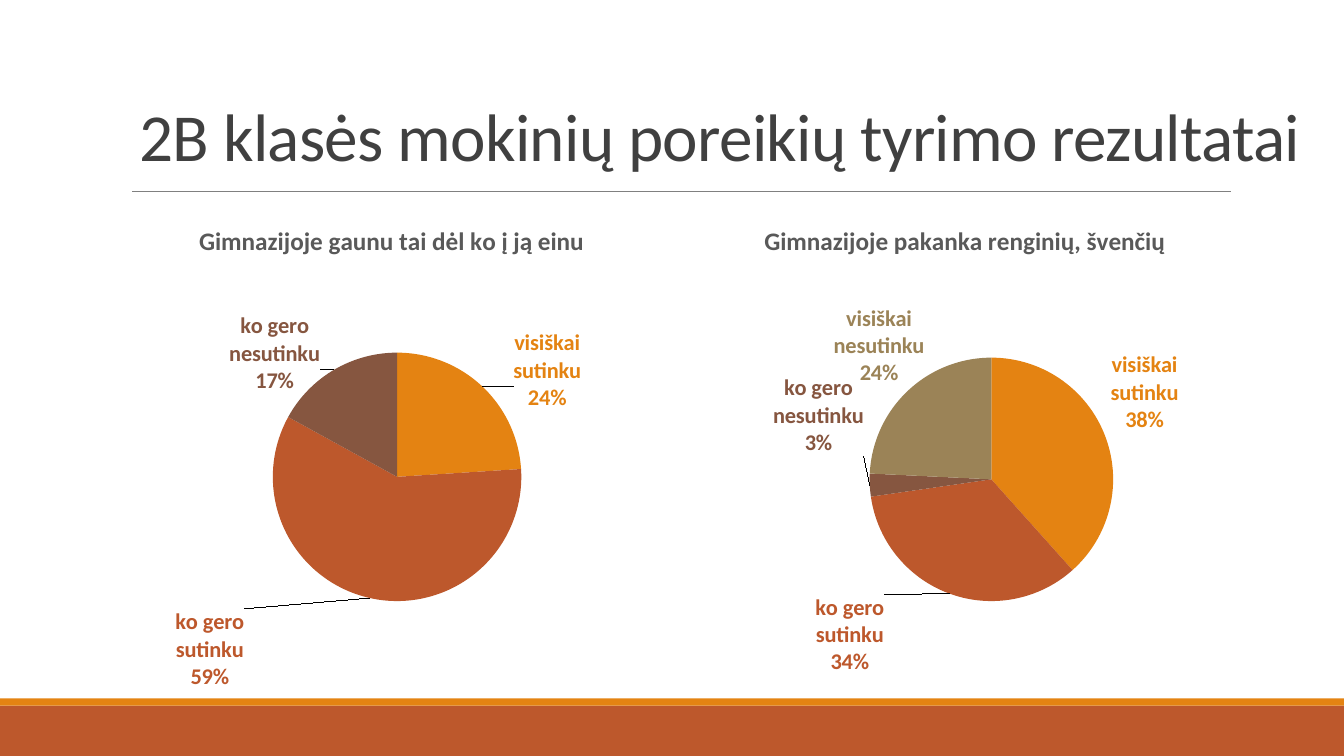
from dataclasses import dataclass

from pptx import Presentation
from pptx import util as u
from pptx.chart.data import CategoryChartData
from pptx.dml.color import RGBColor
from pptx.enum import chart as charts, shapes, text
from pptx.oxml import parse_xml
from pptx.oxml.ns import nsdecls, qn
from pptx.oxml.xmlchemy import OxmlElement

FONT = "Calibri"
COLORS = {
    "orange": "E48312",
    "rust": "BD582C",
    "brown": "865640",
    "olive": "9B8357",
    "title": "404040",
    "heading": "595959",
    "rule": "808080",
}


@dataclass(frozen=True)
class Answer:
    name: str
    percent: int
    color: str
    shift: tuple[float, float]


@dataclass(frozen=True)
class Survey:
    question: str
    left: float
    width: float
    plot_area: tuple[float, float, float, float]
    answers: list[Answer]


@dataclass(frozen=True)
class Band:
    top: float
    height: float
    color: str


BANDS = [Band(7, 0.5, "rust"), Band(6.93, 0.07, "orange")]
SURVEYS = [
    Survey("Gimnazijoje gaunu tai dėl ko į ją einu", 1.2, 5.37, (0.28, 0.3, 0.46, 0.5), [
        Answer("visiškai sutinku", 24, "orange", (0.05, 0.06)),
        Answer("ko gero sutinku", 59, "rust", (-0.23, 0.01)),
        Answer("ko gero nesutinku", 17, "brown", (-0.02, 0.06)),
    ]),
    Survey("Gimnazijoje pakanka renginių, švenčių", 6.94, 5.26, (0.32, 0.31, 0.46, 0.49), [
        Answer("visiškai sutinku", 38, "orange", (0, 0)),
        Answer("ko gero sutinku", 34, "rust", (-0.12, -0.01)),
        Answer("ko gero nesutinku", 3, "brown", (0, -0.14)),
        Answer("visiškai nesutinku", 24, "olive", (0.04, 0)),
    ]),
]


def rgb(name: str) -> RGBColor:
    return RGBColor.from_string(COLORS[name])


def style_font(font, size: float, color: str, bold: bool = False) -> None:
    font.name = FONT
    font.size = u.Pt(size)
    font.bold = bold
    font.color.rgb = rgb(color)


def write_text(frame, content: str, *, size: float, color: str, bold: bool = False,
               line_spacing: float = 1.0, tracking: float = 0) -> None:
    para = frame.paragraphs[0]
    para.alignment = text.PP_ALIGN.CENTER
    para.line_spacing = line_spacing
    span = para.add_run()
    span.text = content
    style_font(span.font, size, color, bold)
    if tracking:
        span.font._element.set("spc", str(round(tracking * 100)))


def add_band(page, band: Band) -> None:
    box = page.shapes.add_shape(shapes.MSO_SHAPE.RECTANGLE, 0, u.Inches(band.top),
                                u.Inches(13.33), u.Inches(band.height))
    box.shadow.inherit = False
    box.fill.solid()
    box.fill.fore_color.rgb = rgb(band.color)
    box.line.fill.background()


def add_rule(page) -> None:
    rule = page.shapes.add_connector(shapes.MSO_CONNECTOR.STRAIGHT, u.Inches(1.31),
                                     u.Inches(1.9), u.Inches(12.21), u.Inches(1.9))
    rule.line.color.rgb = rgb("rule")
    rule.line.width = u.Pt(0.5)
    rule._element.spPr.append(OxmlElement("a:effectLst"))


def add_title(page) -> None:
    box = page.shapes.add_textbox(u.Inches(1.2), u.Inches(0.2), u.Inches(11.88), u.Inches(1.59))
    frame = box.text_frame
    frame.word_wrap = True
    frame.vertical_anchor = text.MSO_ANCHOR.BOTTOM
    write_text(frame, "2B klasės mokinių poreikių tyrimo rezultatai", size=48,
               color="title", line_spacing=0.85, tracking=-0.5)


def manual_layout(settings: dict[str, object]):
    items = "".join(f'<c:{key} val="{value}"/>' for key, value in settings.items())
    return parse_xml(f'<c:layout {nsdecls("c")}><c:manualLayout>{items}'
                     "</c:manualLayout></c:layout>")


def place_plot(chart, area: tuple[float, float, float, float]) -> None:
    plot_area = chart._chartSpace.chart.plotArea
    for layout in plot_area.findall(qn("c:layout")):
        plot_area.remove(layout)
    settings = {"layoutTarget": "inner", "xMode": "edge", "yMode": "edge"}
    plot_area.insert(0, manual_layout(settings | dict(zip("xywh", area))))


def show_name_and_percent(label) -> None:
    for tag, shown in (("showVal", 0), ("showCatName", 1), ("showPercent", 1)):
        label.find(qn(f"c:{tag}")).set("val", str(shown))
    separator = OxmlElement("c:separator")
    separator.text = "\n"
    label.find(qn("c:showBubbleSize")).addnext(separator)


def add_pie(page, survey: Survey) -> None:
    data = CategoryChartData()
    data.categories = [answer.name for answer in survey.answers]
    data.add_series(survey.question, [answer.percent for answer in survey.answers])
    chart = page.shapes.add_chart(charts.XL_CHART_TYPE.PIE, u.Inches(survey.left),
                                  u.Inches(2.02), u.Inches(survey.width),
                                  u.Inches(4.93), data).chart
    chart.has_legend = False
    chart.font.name = FONT
    chart.font.size = u.Pt(10)
    chart.has_title = True
    write_text(chart.chart_title.text_frame, survey.question, size=18,
               color="heading", bold=True)
    place_plot(chart, survey.plot_area)

    plot = chart.plots[0]
    plot.vary_by_categories = True
    series = plot.series[0]
    labels = series.data_labels
    style_font(labels.font, 16, "orange", True)
    labels.position = charts.XL_LABEL_POSITION.OUTSIDE_END
    show_name_and_percent(labels._element)

    for index, answer in enumerate(survey.answers):
        point = series.points[index]
        point.format.fill.solid()
        point.format.fill.fore_color.rgb = rgb(answer.color)
        style_font(point.data_label.font, 16, answer.color, True)
        point.data_label.position = charts.XL_LABEL_POSITION.OUTSIDE_END
        label = labels._element.findall(qn("c:dLbl"))[index]
        show_name_and_percent(label)
        label.insert(1, manual_layout(dict(zip("xy", answer.shift))))


def main() -> None:
    deck = Presentation()
    deck.slide_width, deck.slide_height = u.Inches(13.33), u.Inches(7.5)
    page = deck.slides.add_slide(deck.slide_layouts[6])
    for band in BANDS:
        add_band(page, band)
    add_rule(page)
    add_title(page)
    for survey in SURVEYS:
        add_pie(page, survey)
    deck.save("out.pptx")


if __name__ == "__main__":
    main()
